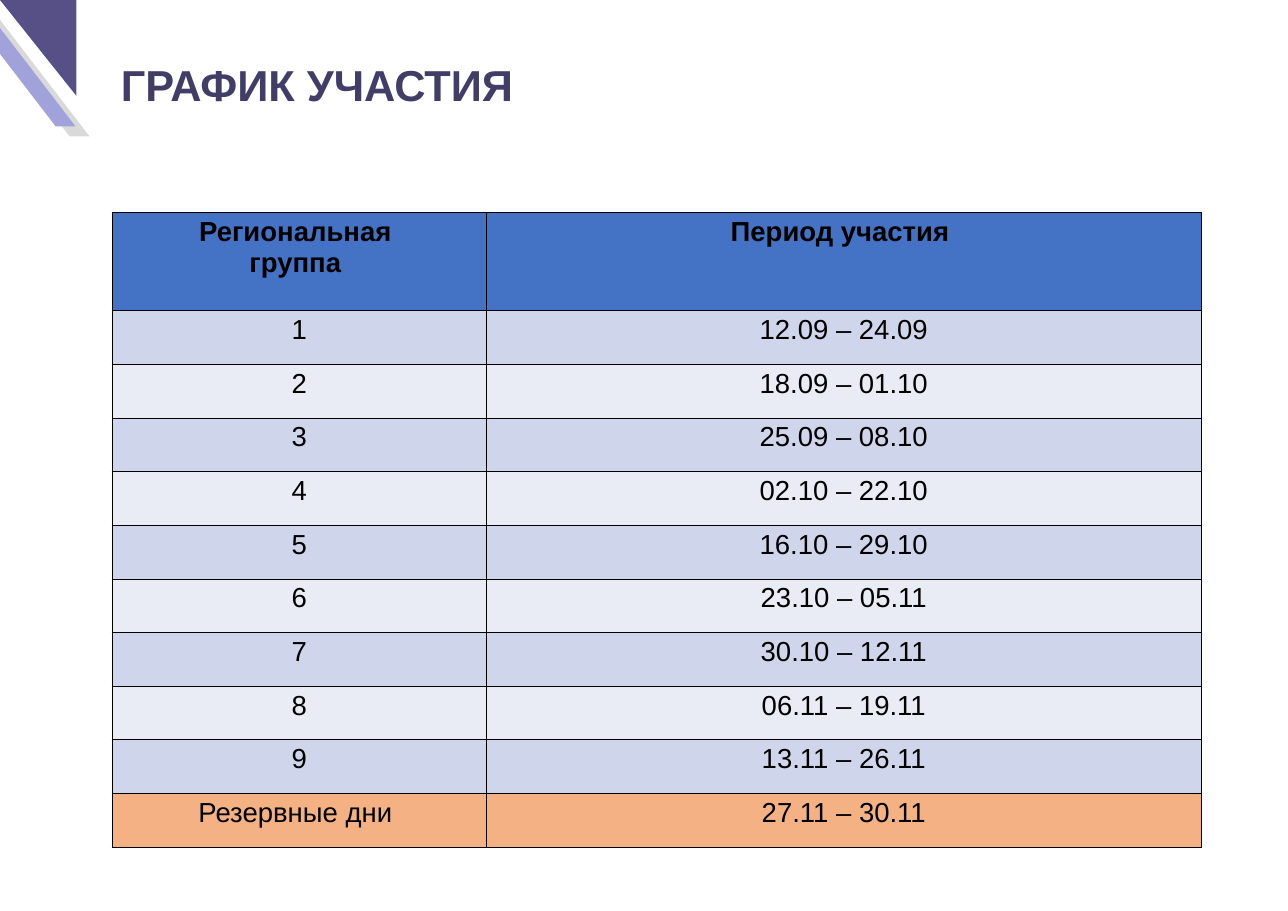
from lxml import etree
from pptx import Presentation
from pptx.dml.color import RGBColor
from pptx.enum.shapes import MSO_SHAPE
from pptx.enum.text import PP_ALIGN
from pptx.oxml.ns import qn
from pptx.util import Inches, Pt

WIDTH, HEIGHT = Inches(16.53), Inches(11.69)
PARALLELOGRAM, TRIANGLE = MSO_SHAPE.PARALLELOGRAM, MSO_SHAPE.RIGHT_TRIANGLE
LEFT, CENTER = PP_ALIGN.LEFT, PP_ALIGN.CENTER

HEADER_FILL, RESERVE_FILL = "4472C4", "F4B183"
BAND_FILLS = ["CFD5EA", "E9EBF5"]
PERIODS = [
    "12.09 – 24.09", "18.09 – 01.10", "25.09 – 08.10",
    "02.10 – 22.10", "16.10 – 29.10", "23.10 – 05.11",
    "30.10 – 12.11", "06.11 – 19.11", "13.11 – 26.11",
]


def rgb(color):
    return RGBColor.from_string(color)


def across(percent):
    return round(WIDTH * percent / 100)


def down(percent):
    return round(HEIGHT * percent / 100)


def box(left, top, width, height):
    """Turn percentages of the slide into lengths."""
    return across(left), down(top), across(width), down(height)


def write(tf, text, size, color="000000", bold=False, align=LEFT, font="Arial"):
    """Fill a text frame, one paragraph per line of text."""
    for i, line in enumerate(text.split("\n")):
        p = tf.paragraphs[0] if i == 0 else tf.add_paragraph()
        p.alignment = align
        r = p.add_run()
        r.text = line
        r.font.name, r.font.size, r.font.bold = font, Pt(size), bold
        r.font.color.rgb = rgb(color)


def add_borders(cell, color="000000", width=1):
    tc_pr = cell._tc.get_or_add_tcPr()
    for side in ("lnL", "lnR", "lnT", "lnB"):
        ln = etree.SubElement(tc_pr, qn(f"a:{side}"), w=str(Pt(width)))
        fill = etree.SubElement(ln, qn("a:solidFill"))
        etree.SubElement(fill, qn("a:srgbClr"), val=color)


class Deck:
    """Slide with its style; positions are percentages of the slide."""

    title_color, title_size, cell_size = "423D67", 40, 25.4

    def __init__(self, prs):
        self.slide = prs.slides.add_slide(prs.slide_layouts[6])

    def shape(self, kind, place, fill):
        sp = self.slide.shapes.add_shape(kind, *box(*place))
        sp.shadow.inherit = False
        sp.fill.solid()
        sp.fill.fore_color.rgb = rgb(fill)
        sp.line.fill.background()
        return sp

    def stripe(self, left, top, fill):
        sp = self.shape(PARALLELOGRAM, (left, top, 9.07, 13.86), fill)
        sp.adjustments[0] = 0.83
        sp._element.spPr.find(qn("a:xfrm")).set("flipH", "1")

    def corner(self, width, height, fill):
        self.shape(TRIANGLE, (0, 0, width, height), fill).rotation = 180

    def title(self, text, place):
        tf = self.slide.shapes.add_textbox(*box(*place)).text_frame
        tf.word_wrap = True
        tf.margin_left = 0
        write(tf, text, self.title_size, self.title_color, bold=True)

    def table(self, rows, fills, left, top, widths, heights):
        place = box(left, top, sum(widths), sum(heights))
        table = self.slide.shapes.add_table(len(rows), len(widths), *place).table
        table.first_row = table.horz_banding = False
        for column, width in zip(table.columns, widths):
            column.width = across(width)
        for row, height in zip(table.rows, heights):
            row.height = down(height)
        for i, (texts, fill) in enumerate(zip(rows, fills)):
            for cell, text in zip(table.rows[i].cells, texts):
                add_borders(cell)
                cell.fill.solid()
                cell.fill.fore_color.rgb = rgb(fill)
                write(cell.text_frame, text, self.cell_size, bold=i == 0, align=CENTER)


def main():
    prs = Presentation()
    prs.slide_width, prs.slide_height = WIDTH, HEIGHT
    deck = Deck(prs)

    deck.stripe(-2.12, 1.11, "D9D9D9")
    deck.stripe(-3.21, 0, "A2A2DA")
    deck.corner(5.93, 10.52, "565087")

    groups = [(str(n), period) for n, period in enumerate(PERIODS, 1)]
    rows = [
        ("Региональная \nгруппа ", "Период участия "),
        *groups,
        ("Резервные дни ", "27.11 – 30.11"),
    ]
    bands = [BAND_FILLS[i % 2] for i in range(len(groups))]
    deck.table(
        rows, [HEADER_FILL, *bands, RESERVE_FILL], left=8.71, top=23.35,
        widths=[29.04, 55.54], heights=[10.78] + [5.89] * (len(rows) - 1),
    )
    deck.title("ГРАФИК УЧАСТИЯ", (9.38, 5.99, 83.61, 6.59))
    prs.save("out.pptx")


if __name__ == "__main__":
    main()
